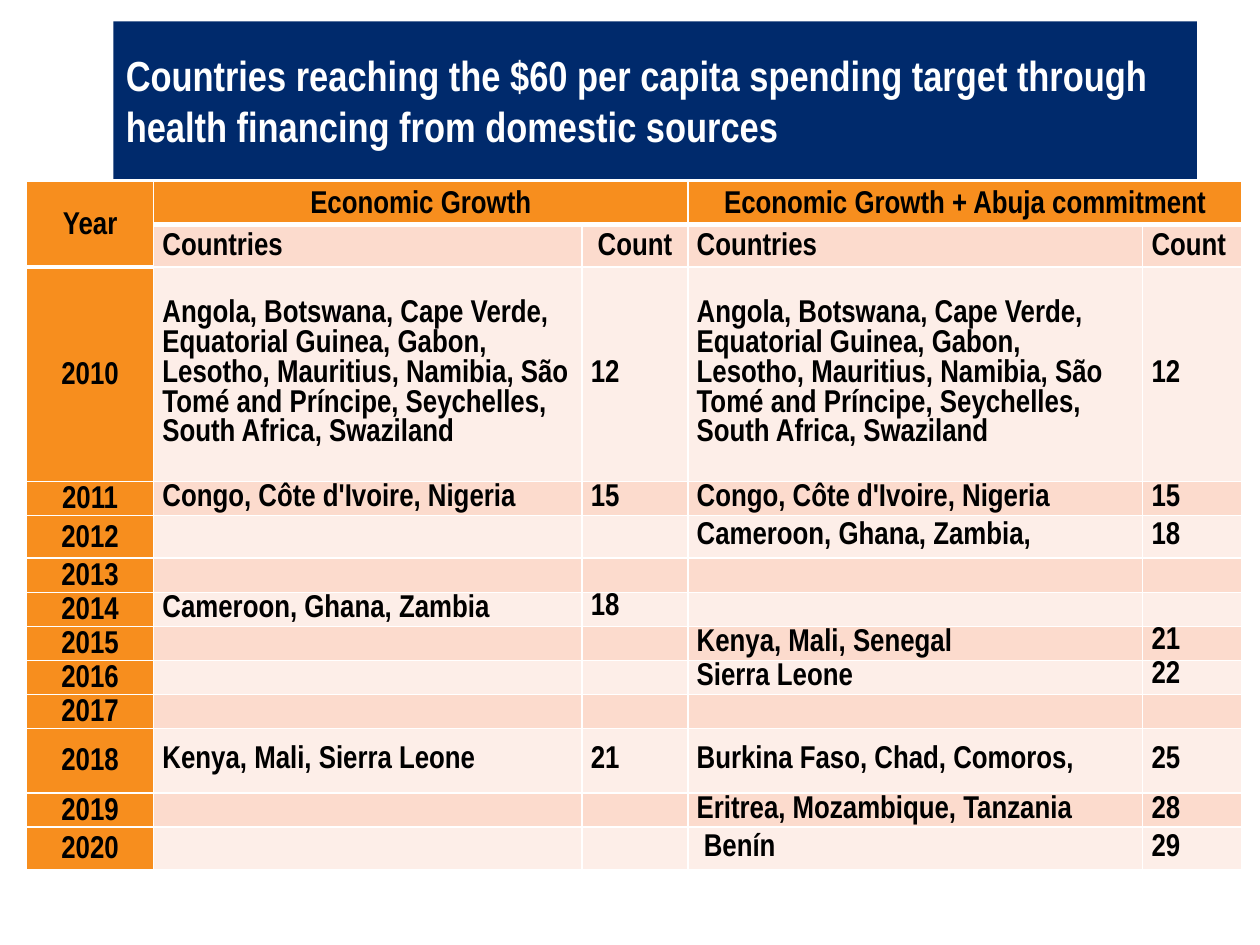
from dataclasses import dataclass

from lxml import etree
from pptx import Presentation
from pptx import util as u
from pptx.dml.color import RGBColor
from pptx.enum import shapes, text
from pptx.oxml.ns import qn


@dataclass(frozen=True)
class Theme:
    font: str = "Arial Narrow"
    navy: str = "002A6C"
    orange: str = "F78E1E"
    peach: str = "FCDBCD"
    blush: str = "FDEEE8"
    white: str = "FFFFFF"
    black: str = "000000"
    title_size: int = 24
    table_size: int = 18
    body_pitch: int = 17
    header_spacing: float = 1.15


@dataclass(frozen=True)
class YearRow:
    year: int
    height: float
    growth: str = ""
    growth_count: str = ""
    abuja: str = ""
    abuja_count: str = ""
    counts_on_top: bool = False


THEME = Theme()
TITLE = ("Countries reaching the $60 per capita spending target through "
         "health financing from domestic sources")
FIRST_TWELVE = ("Angola, Botswana, Cape Verde, Equatorial Guinea, Gabon, Lesotho, "
                "Mauritius, Namibia, São Tomé and Príncipe, Seychelles, "
                "South Africa, Swaziland")
NEXT_THREE = "Congo, Côte d'Ivoire, Nigeria"
COLUMN_WIDTHS = (1.01, 3.4, 0.84, 3.61, 0.79)
HEADER_HEIGHT = 0.34
YEARS = (
    YearRow(2010, 1.7, FIRST_TWELVE, "12", FIRST_TWELVE, "12"),
    YearRow(2011, 0.18, NEXT_THREE, "15", NEXT_THREE, "15"),
    YearRow(2012, 0.34, abuja="Cameroon, Ghana, Zambia,", abuja_count="18"),
    YearRow(2013, 0.18),
    YearRow(2014, 0.18, "Cameroon, Ghana, Zambia", "18", counts_on_top=True),
    YearRow(2015, 0.18, abuja="Kenya, Mali, Senegal", abuja_count="21", counts_on_top=True),
    YearRow(2016, 0.18, abuja="Sierra Leone", abuja_count="22", counts_on_top=True),
    YearRow(2017, 0.23),
    YearRow(2018, 0.51, "Kenya, Mali, Sierra Leone", "21",
            "Burkina Faso, Chad, Comoros,", "25"),
    YearRow(2019, 0.18, abuja="Eritrea, Mozambique, Tanzania", abuja_count="28"),
    YearRow(2020, 0.34, abuja=" Benín", abuja_count="29"),
)


def colour(value: str) -> RGBColor:
    return RGBColor.from_string(value)


def add_span(para, words: str, size: int, ink: str) -> None:
    span = para.add_run()
    span.text = words
    span.font.name = THEME.font
    span.font.size = u.Pt(size)
    span.font.bold = True
    span.font.color.rgb = colour(ink)


def set_borders(cell, bottom: float = 1) -> None:
    """Draw white borders; they must precede the fill in the cell's properties."""
    properties = cell._tc.get_or_add_tcPr()
    widths = {"a:lnL": 1, "a:lnR": 1, "a:lnT": 1, "a:lnB": bottom}
    for position, (tag, width) in enumerate(widths.items()):
        line = etree.Element(qn(tag), w=str(u.Pt(width)))
        fill = etree.SubElement(line, qn("a:solidFill"))
        etree.SubElement(fill, qn("a:srgbClr"), val=THEME.white)
        properties.insert(position, line)


def fill_cell(cell, words: str, fill: str, spacing, centred: bool = False,
              on_top: bool = False, bottom: float = 1) -> None:
    cell.fill.solid()
    cell.fill.fore_color.rgb = colour(fill)
    set_borders(cell, bottom)
    cell.margin_left = cell.margin_right = u.Inches(0.07)
    cell.margin_top = cell.margin_bottom = 0
    cell.vertical_anchor = text.MSO_ANCHOR.TOP if on_top else text.MSO_ANCHOR.MIDDLE
    para = cell.text_frame.paragraphs[0]
    para.line_spacing = spacing
    if centred:
        para.alignment = text.PP_ALIGN.CENTER
    if words:
        add_span(para, words, THEME.table_size, THEME.black)
    else:
        para.font.size = u.Pt(10)


def add_title(page) -> None:
    box = page.shapes.add_shape(shapes.MSO_SHAPE.RECTANGLE, u.Inches(0.9), u.Inches(0.17),
                                u.Inches(8.6), u.Inches(1.25))
    box.shadow.inherit = False
    box.fill.solid()
    box.fill.fore_color.rgb = colour(THEME.navy)
    box.line.fill.background()
    frame = box.text_frame
    frame.word_wrap = True
    frame.vertical_anchor = text.MSO_ANCHOR.MIDDLE
    para = frame.paragraphs[0]
    para.alignment = text.PP_ALIGN.LEFT
    add_span(para, TITLE, THEME.title_size, THEME.white)


def fill_headers(table) -> None:
    for column, words in ((0, "Year"), (1, "Economic Growth"),
                          (3, "Economic Growth + Abuja commitment")):
        last = (1, 0) if column == 0 else (0, column + 1)
        table.cell(0, column).merge(table.cell(*last))
        for cell in (table.cell(0, column), table.cell(*last)):
            fill_cell(cell, words if cell.is_merge_origin else "", THEME.orange,
                      THEME.header_spacing, centred=True, bottom=3)
    for column, words in enumerate(("Countries", "Count") * 2, start=1):
        fill_cell(table.cell(1, column), words, THEME.peach, THEME.header_spacing,
                  centred=column == 2)


def fill_year(table, index: int, row: YearRow) -> None:
    fill_cell(table.cell(index, 0), str(row.year), THEME.orange,
              THEME.header_spacing, centred=True)
    band = THEME.peach if index % 2 else THEME.blush
    values = (row.growth, row.growth_count, row.abuja, row.abuja_count)
    for column, words in enumerate(values, start=1):
        fill_cell(table.cell(index, column), words, band, u.Pt(THEME.body_pitch),
                  on_top=row.counts_on_top and column % 2 == 0)


def add_year_table(page) -> None:
    heights = [HEADER_HEIGHT] * 2 + [row.height for row in YEARS]
    table = page.shapes.add_table(
        len(heights), len(COLUMN_WIDTHS), u.Inches(0.21), u.Inches(1.44),
        u.Inches(sum(COLUMN_WIDTHS)), u.Inches(sum(heights))).table
    for column, width in zip(table.columns, COLUMN_WIDTHS):
        column.width = u.Inches(width)
    for line, height in zip(table.rows, heights):
        line.height = u.Inches(height)
    fill_headers(table)
    for index, row in enumerate(YEARS, start=2):
        fill_year(table, index, row)


def main() -> None:
    deck = Presentation()
    deck.slide_width, deck.slide_height = u.Inches(10), u.Inches(7.5)
    page = deck.slides.add_slide(deck.slide_layouts[6])
    add_title(page)
    add_year_table(page)
    deck.save("out.pptx")


if __name__ == "__main__":
    main()
